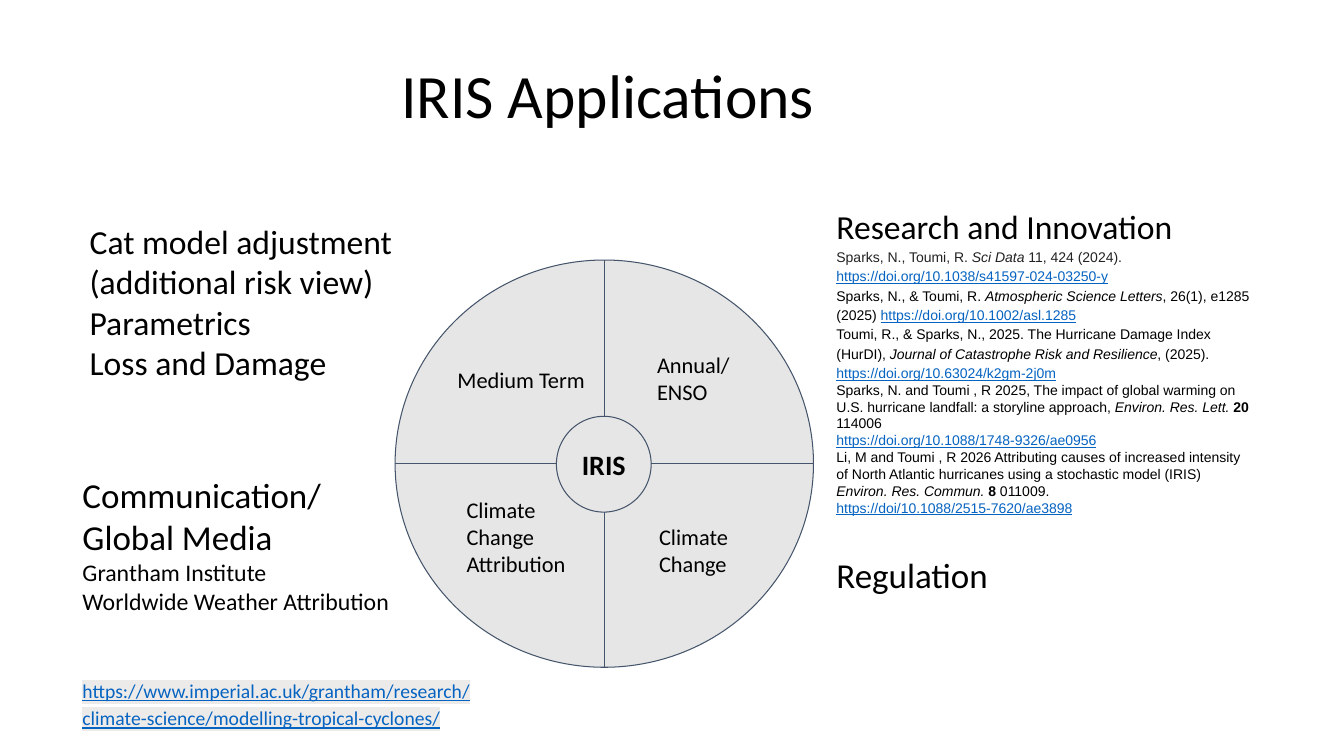
import pptx
import pptx.util
import pptx.dml.color
import pptx.enum.shapes
import pptx.enum.text
import pptx.oxml
import lxml.etree


def colour(hex_code):
    return pptx.dml.color.RGBColor.from_string(hex_code)


def add_text(left, top, wide, high, paragraphs):
    frame = slide.shapes.add_textbox(
        int(left * column), int(top * row), int(wide * column), int(high * row)
    ).text_frame
    frame.word_wrap = True
    frame.margin_left = frame.margin_right = inset
    frame.margin_top = frame.margin_bottom = inset
    for number, (size, family, spacing, ink, pieces) in enumerate(paragraphs):
        paragraph = frame.paragraphs[0] if number == 0 else frame.add_paragraph()
        paragraph.line_spacing = spacing
        paragraph.font.size = pptx.util.Pt(size)
        paragraph.font.name = family
        paragraph.font.color.rgb = colour(ink)
        for words, style in pieces:
            run = paragraph.add_run()
            run.text = words
            if style == "italic":
                run.font.italic = True
            elif style == "bold":
                run.font.bold = True
            elif style == "link":
                run.font.underline = True
                run.font.color.rgb = colour(LINK)
    return frame


BLACK, LINK, GREY, NAVY = "000000", "0563C1", "E7E6E6", "44546A"

deck = pptx.Presentation()
deck.slide_width = pptx.util.Inches(13.33)
deck.slide_height = pptx.util.Inches(7.5)
column = deck.slide_width / 100
row = deck.slide_height / 100
inset = pptx.util.Inches(0.1)
slide = deck.slides.add_slide(deck.slide_layouts[5])

title = slide.shapes.title
title.left, title.top = int(25.35 * column), int(3.33 * row)
title.width, title.height = int(43.58 * column), int(19.33 * row)
title.text_frame.text = "IRIS Applications"
title.text_frame.margin_left = pptx.util.Inches(0.6)
title.text_frame.vertical_anchor = pptx.enum.text.MSO_ANCHOR.MIDDLE
heading = title.text_frame.paragraphs[0]
heading.alignment = pptx.enum.text.PP_ALIGN.LEFT
heading.line_spacing = 0.9
heading.font.size = pptx.util.Pt(44)
heading.font.name = "Calibri"
heading.font.color.rgb = colour(BLACK)

circles = []
for left, top, wide, high in [(29.4, 34.4, 31.13, 53.87), (41.4, 55.07, 7.05, 12.67)]:
    circle = slide.shapes.add_shape(
        pptx.enum.shapes.MSO_SHAPE.OVAL,
        int(left * column), int(top * row), int(wide * column), int(high * row),
    )
    circle.shadow.inherit = False
    circle.fill.solid()
    circle.fill.fore_color.rgb = colour(GREY)
    circle.line.color.rgb = colour(NAVY)
    circle.line.width = pptx.util.Pt(0.75)
    circles.append(circle)
wheel, hub = circles

hub.text_frame.text = "IRIS"
hub.text_frame.vertical_anchor = pptx.enum.text.MSO_ANCHOR.MIDDLE
hub_name = hub.text_frame.paragraphs[0]
hub_name.alignment = pptx.enum.text.PP_ALIGN.CENTER
hub_name.font.size = pptx.util.Pt(20)
hub_name.font.name = "Calibri"
hub_name.font.bold = True
hub_name.font.color.rgb = colour(BLACK)

middle_x = wheel.left + wheel.width // 2
middle_y = wheel.top + wheel.height // 2
for start_x, start_y, end_x, end_y in [
    (middle_x, wheel.top, middle_x, hub.top),
    (middle_x, hub.top + hub.height, middle_x, wheel.top + wheel.height),
    (wheel.left, middle_y, hub.left, middle_y),
    (hub.left + hub.width, middle_y, wheel.left + wheel.width, middle_y),
]:
    spoke = slide.shapes.add_connector(
        pptx.enum.shapes.MSO_CONNECTOR.STRAIGHT, start_x, start_y, end_x, end_y
    )
    spoke.line.color.rgb = colour(NAVY)
    spoke.line.width = pptx.util.Pt(0.75)
    lxml.etree.SubElement(
        spoke._element.spPr, pptx.oxml.ns.qn("a:effectLst")
    )

for left, top, wide, high, lines in [
    (33.3, 47.07, 13, 6.67, [("Medium Term", 16)]),
    (48.15, 45.07, 13, 10.27, [("Annual/", 16), ("ENSO", 16)]),
    (33.98, 64.27, 13, 13.47, [("Climate", 16), ("Change", 16), ("Attribution", 16)]),
    (48.3, 67.87, 13, 10.27, [("Climate", 16), ("Change", 16)]),
    (5.93, 27.87, 33.9, 22.8, [
        ("Cat model adjustment", 24), ("(additional risk view)", 24),
        ("Parametrics", 24), ("Loss and Damage", 24),
    ]),
    (5.4, 61.33, 25.05, 23.07, [
        ("Communication/", 25), ("Global Media", 25),
        ("Grantham Institute", 17), ("Worldwide Weather Attribution", 17),
    ]),
    (61.5, 71.87, 32.63, 8.13, [("Regulation", 25)]),
]:
    add_text(left, top, wide, high, [
        (size, "Calibri", 1.0, BLACK, [(words, "plain")]) for words, size in lines
    ])

address = add_text(5.4, 88, 33.08, 9.47, [(14, "Calibri", 1.15, LINK, [(
    "https://www.imperial.ac.uk/grantham/research/climate-science/modelling-tropical-cyclones/",
    "link",
)])])
address_style = address.paragraphs[0].runs[0].font._element
marker = lxml.etree.SubElement(address_style, pptx.oxml.ns.qn("a:highlight"))
lxml.etree.SubElement(marker, pptx.oxml.ns.qn("a:srgbClr")).set("val", "EDEBE9")

references = [
    (1.15, "222222", [
        ("Sparks, N., Toumi, R. ", "plain"), ("Sci Data", "italic"),
        (" 11, 424 (2024). ", "plain"),
        ("https://doi.org/10.1038/s41597-024-03250-y", "link"),
    ]),
    (1.15, BLACK, [
        ("Sparks, N., & Toumi, R. ", "plain"), ("Atmospheric Science Letters", "italic"),
        (", 26(1), e1285 (2025) ", "plain"),
        ("https://doi.org/10.1002/asl.1285", "link"),
    ]),
    (1.15, BLACK, [
        ("Toumi, R., & Sparks, N., 2025. The Hurricane Damage Index (HurDI), ", "plain"),
        ("Journal of Catastrophe Risk and Resilience", "italic"), (", (2025).", "plain"),
        (" https://doi.org/10.63024/k2gm-2j0m", "link"),
    ]),
    (1.0, BLACK, [
        ("Sparks, N. and Toumi , R 2025, The impact of global warming on U.S. "
         "hurricane landfall: a storyline approach, ", "plain"),
        ("Environ. Res. Lett. ", "italic"), ("20", "bold"), (" 114006", "plain"),
    ]),
    (1.0, BLACK, [("https://doi.org/10.1088/1748-9326/ae0956", "link")]),
    (1.0, BLACK, [
        ("Li, M and Toumi , R 2026 Attributing causes of increased intensity of "
         "North Atlantic hurricanes using a stochastic model (IRIS) ", "plain"),
        ("Environ. Res. Commun. ", "italic"), ("8", "bold"), (" 011009. ", "plain"),
        ("https://doi/10.1088/2515-7620/ae3898", "link"),
    ]),
]
add_text(61.5, 25.07, 32.63, 49.87, [
    (24, "Calibri", 1.15, BLACK, [("Research and Innovation", "plain")]),
    *[(10, "Arial", spacing, ink, pieces) for spacing, ink, pieces in references],
])

deck.save("out.pptx")
